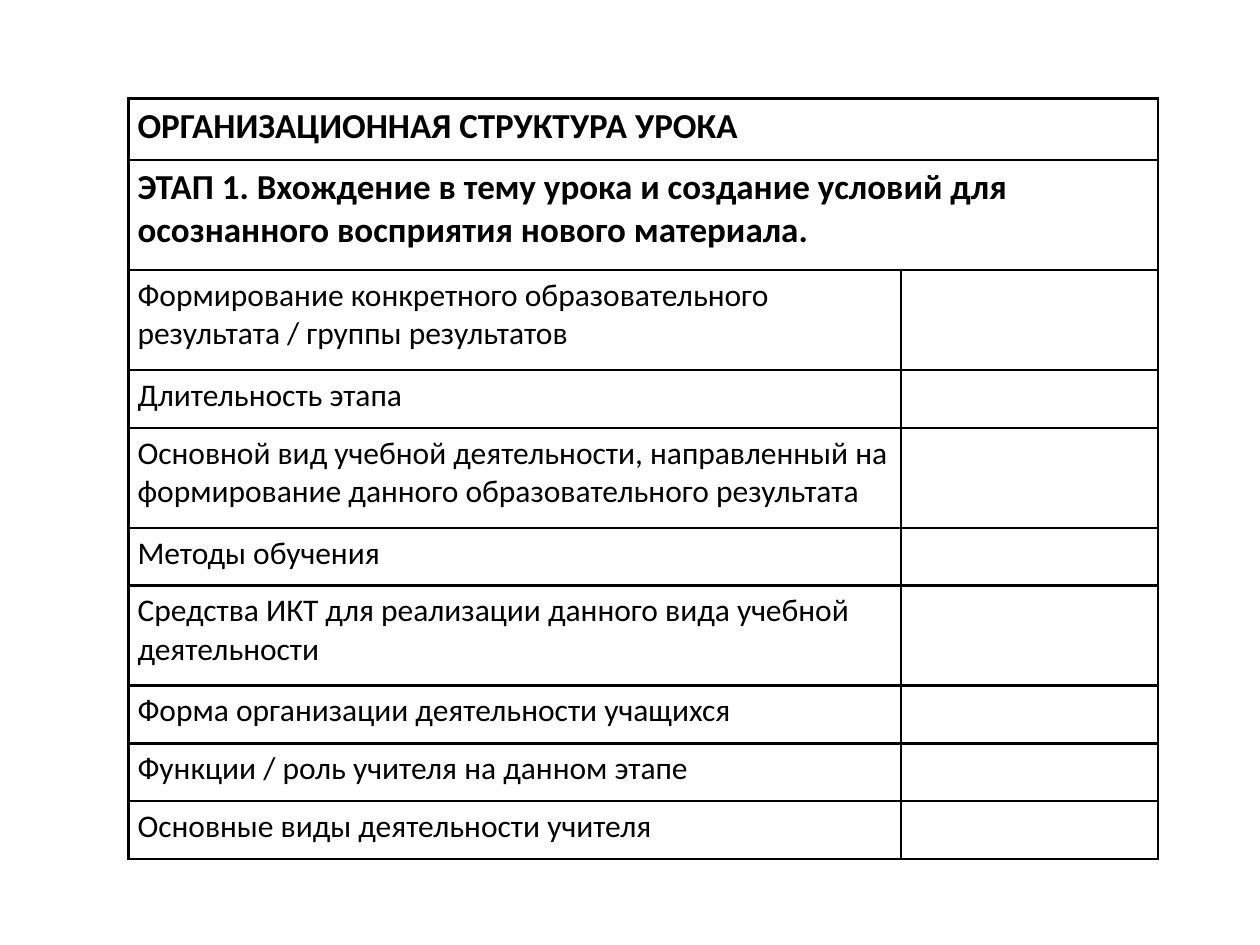
from lxml import etree
from pptx import Presentation
from pptx.dml.color import RGBColor
from pptx.enum import text
from pptx.oxml import ns
from pptx.util import Pt

HEADINGS = [
    ("ОРГАНИЗАЦИОННАЯ СТРУКТУРА УРОКА", 35.3),
    ("ЭТАП 1. Вхождение в тему урока и создание условий для "
     "осознанного восприятия нового материала.", 62.8),
]
ONE_LINE, TWO_LINES = 33.1, 57.1
ASPECTS = [
    ("Формирование конкретного образовательного результата / группы результатов", TWO_LINES),
    ("Длительность этапа", ONE_LINE),
    ("Основной вид учебной деятельности, направленный на "
     "формирование данного образовательного результата", TWO_LINES),
    ("Методы обучения", ONE_LINE),
    ("Средства ИКТ для реализации данного вида учебной деятельности", TWO_LINES),
    ("Форма организации деятельности учащихся", ONE_LINE),
    ("Функции / роль учителя на данном этапе", ONE_LINE),
    ("Основные виды деятельности учителя", ONE_LINE),
]


def color(value):
    return RGBColor.from_string(value)


class LessonSlide:
    font = "Calibri"
    ink = "000000"
    paper = "FFFFFF"
    border = 1.5

    def __init__(self, deck):
        self.slide = deck.slides.add_slide(deck.slide_layouts[6])

    def outline(self, cell):
        properties = cell._tc.get_or_add_tcPr()
        for side in ("lnL", "lnR", "lnT", "lnB"):
            line = etree.SubElement(properties, ns.qn(f"a:{side}"), w=str(Pt(self.border)))
            fill = etree.SubElement(line, ns.qn("a:solidFill"))
            etree.SubElement(fill, ns.qn("a:srgbClr"), val=self.ink)

    def cell(self, cell, wording, size, bold):
        cell.margin_left = cell.margin_right = Pt(5.2)
        cell.margin_top = cell.margin_bottom = Pt(3.6)
        cell.vertical_anchor = text.MSO_ANCHOR.TOP
        self.outline(cell)
        cell.fill.solid()
        cell.fill.fore_color.rgb = color(self.paper)
        cell.text = wording
        font = cell.text_frame.paragraphs[0].font
        font.name, font.size, font.bold = self.font, Pt(size), bold
        font.color.rgb = color(self.ink)

    def table(self, left, top, widths, headings, aspects):
        rows = headings + aspects
        heights = [height for _, height in rows]
        plan = self.slide.shapes.add_table(
            len(rows), len(widths), Pt(left), Pt(top), Pt(sum(widths)), Pt(sum(heights))
        ).table
        plan.first_row = plan.horz_banding = False
        for column, width in zip(plan.columns, widths):
            column.width = Pt(width)
        for index, (wording, height) in enumerate(rows):
            plan.rows[index].height = Pt(height)
            heading = index < len(headings)
            label, answer = plan.cell(index, 0), plan.cell(index, 1)
            self.cell(label, wording, 20 if heading else 18, heading)
            self.cell(answer, "", 18, False)
            if heading:
                label.merge(answer)


def main():
    deck = Presentation()
    deck.slide_width, deck.slide_height = Pt(720), Pt(540)
    lesson = LessonSlide(deck)
    lesson.table(73.4, 56.2, [441.4, 146.9], HEADINGS, ASPECTS)
    deck.save("out.pptx")


if __name__ == "__main__":
    main()
